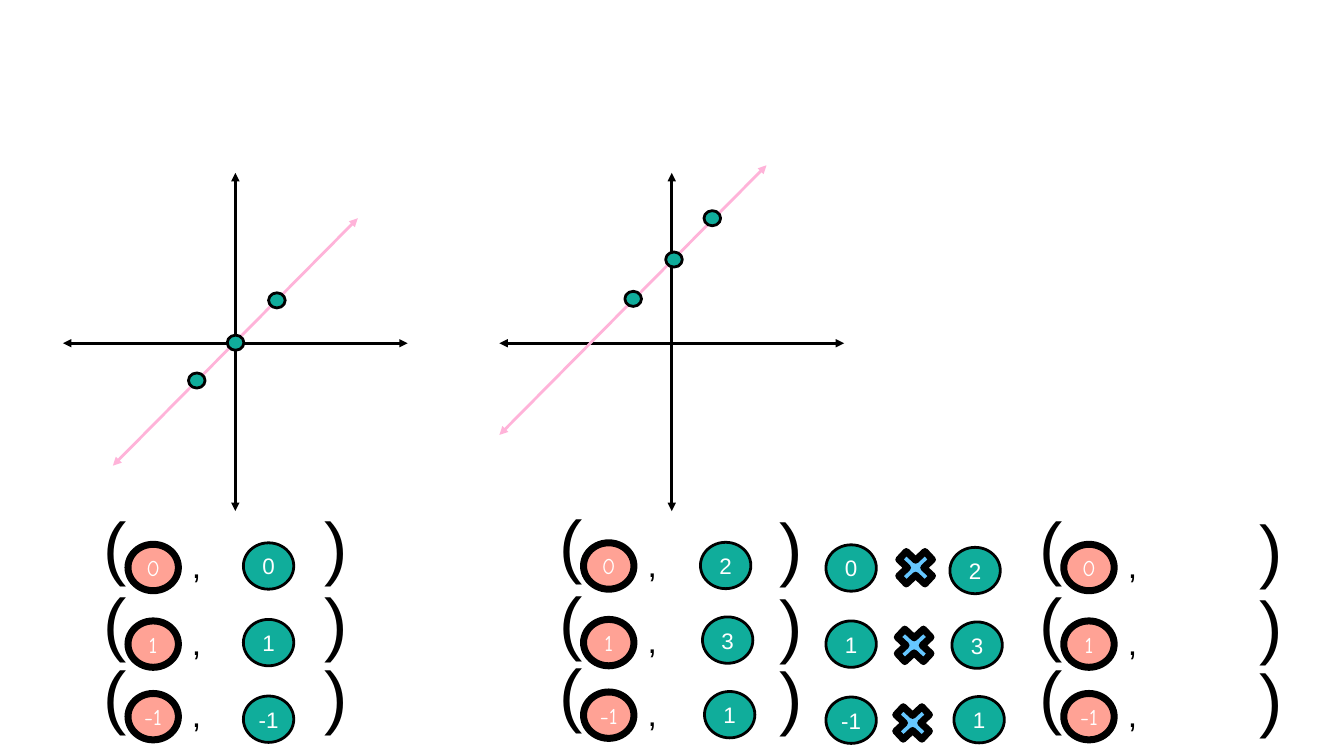
from lxml.etree import SubElement
from pptx import Presentation
from pptx.dml.color import RGBColor
from pptx.enum.shapes import MSO_CONNECTOR, MSO_SHAPE
from pptx.enum.text import MSO_ANCHOR, PP_ALIGN
from pptx.oxml.ns import qn
from pptx.util import Inches, Pt

BLACK, WHITE = "000000", "FFFFFF"
GREEN, CORAL, PINK, BLUE = "10AD9B", "FFA295", "FFB3D9", "66C7FF"
ROW_OFFSETS = (0, 1.52, 2.96)
INPUTS = ("0", "1", "-1")
OUTPUTS = ("2", "3", "1")


def color(hex_string):
    return RGBColor.from_string(hex_string)


def add_arrow(slide, start, end, line_color=BLACK):
    """Draw a straight line with an arrowhead at both ends."""
    points = [Inches(value) for value in (*start, *end)]
    connector = slide.shapes.add_connector(MSO_CONNECTOR.STRAIGHT, *points)
    connector.line.color.rgb = color(line_color)
    connector.line.width = Pt(4)
    line = connector.line._get_or_add_ln()
    for end_tag in ("a:headEnd", "a:tailEnd"):
        SubElement(line, qn(end_tag), type="triangle")
    SubElement(connector._element.spPr, qn("a:effectLst"))


def write_text(shape, text, size, font, text_color):
    frame = shape.text_frame
    frame.vertical_anchor = MSO_ANCHOR.MIDDLE
    frame.margin_left = frame.margin_right = Inches(0.06)
    frame.margin_top = frame.margin_bottom = Inches(0.06)
    paragraph = frame.paragraphs[0]
    run = paragraph.add_run()
    run.text = text
    run.font.size = Pt(size)
    run.font.name = font
    run.font.color.rgb = color(text_color)
    return paragraph


def add_outlined(slide, kind, box, fill, line_width):
    shape = slide.shapes.add_shape(kind, *(Inches(value) for value in box))
    shape.shadow.inherit = False
    shape.fill.solid()
    shape.fill.fore_color.rgb = color(fill)
    shape.line.color.rgb = color(BLACK)
    shape.line.width = Pt(line_width)
    return shape


def add_number(slide, left, top, text, fill=GREEN, line_width=4, font="Arial"):
    oval = add_outlined(slide, MSO_SHAPE.OVAL, (left, top, 1, 0.92), fill, line_width)
    oval.text_frame.word_wrap = True
    write_text(oval, text, 32, font, WHITE).alignment = PP_ALIGN.CENTER


def add_symbol(slide, box, text, size):
    textbox = slide.shapes.add_textbox(*(Inches(value) for value in box))
    textbox.text_frame.word_wrap = False
    write_text(textbox, text, size, "Arial", BLACK).line_spacing = 0.9


def add_graph(slide, center_x, line_start, line_end, points):
    """Draw the two axes, a slanted line and the points on it."""
    add_arrow(slide, (center_x, 3.43), (center_x, 10.14))
    add_arrow(slide, (center_x + 3.42, 6.81), (center_x - 3.42, 6.81))
    add_arrow(slide, line_start, line_end, PINK)
    for left, top in points:
        add_outlined(slide, MSO_SHAPE.OVAL, (left, top, 0.33, 0.3), GREEN, 4)


def add_ordered_pairs(slide, left, top, closing_shift):
    """Draw three bracketed pairs, with room for the second number."""
    for offset, number in zip(ROW_OFFSETS, INPUTS):
        row = top + offset
        add_symbol(slide, (left, row, 0.48, 2.26), "(", 100)
        add_symbol(slide, (left + 1.75, row + 0.76, 0.3, 1.47), ",", 48)
        add_number(slide, left + 0.54, row + 1.03, number, CORAL, 10, "Comic Neue")
        add_symbol(slide, (left + 4.37, row + closing_shift, 0.48, 2.26), ")", 100)


def add_number_column(slide, left, top, step_x, step_y, numbers):
    for index, number in enumerate(numbers):
        add_number(slide, left + index * step_x, top + index * step_y, number)


def add_multiply_column(slide, left, top, step_x, step_y):
    for index in range(len(INPUTS)):
        box = (left + index * step_x, top + index * step_y, 1, 0.93)
        add_outlined(slide, MSO_SHAPE.MATH_MULTIPLY, box, BLUE, 10)


def main():
    presentation = Presentation()
    presentation.slide_width = Inches(26.67)
    presentation.slide_height = Inches(15)
    slide = presentation.slides.add_slide(presentation.slide_layouts[6])

    add_graph(slide, 4.67, (7.1, 4.33), (2.24, 9.24),
              [(4.51, 6.65), (5.33, 5.81), (3.74, 7.4)])
    add_graph(slide, 13.33, (15.21, 3.28), (9.91, 8.63),
              [(13.21, 5), (13.97, 4.18), (12.4, 5.78)])

    add_ordered_pairs(slide, 2, 9.77, 0)
    add_ordered_pairs(slide, 11.04, 9.74, 0.06)
    add_number_column(slide, 4.83, 10.77, 0, 1.52, INPUTS)
    add_number_column(slide, 13.9, 10.76, 0.04, 1.48, OUTPUTS)

    add_ordered_pairs(slide, 20.57, 9.77, 0.06)
    add_number_column(slide, 16.39, 10.81, 0, 1.51, INPUTS)
    add_number_column(slide, 18.85, 10.86, 0.04, 1.48, OUTPUTS)
    add_multiply_column(slide, 17.67, 10.8, -0.03, 1.54)

    presentation.save("out.pptx")


if __name__ == "__main__":
    main()
